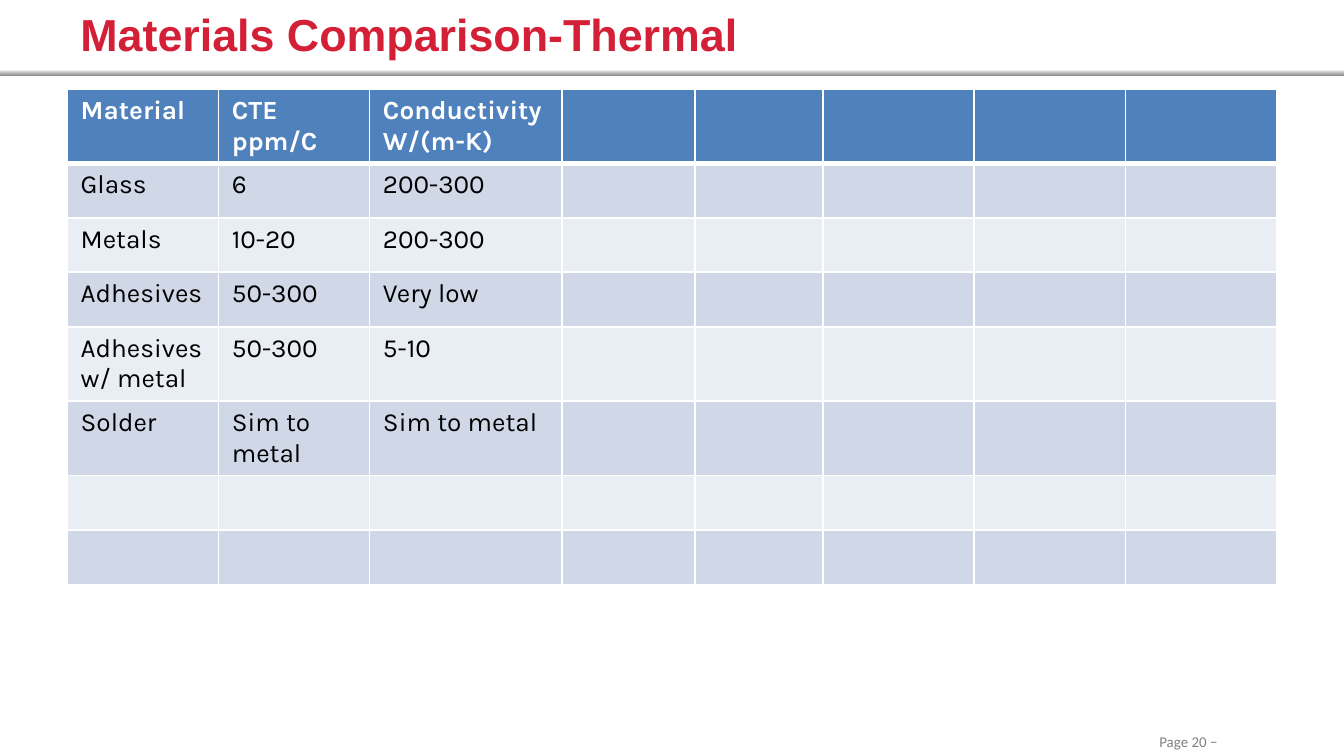
from dataclasses import dataclass

from lxml.etree import SubElement
from pptx import Presentation
from pptx.dml.color import RGBColor
from pptx.enum.shapes import MSO_SHAPE
from pptx.enum.text import MSO_ANCHOR, PP_ALIGN
from pptx.oxml.ns import qn
from pptx.slide import Slide
from pptx.table import _Cell
from pptx.util import Pt

RED = RGBColor(0xD4, 0x20, 0x37)
BLACK = RGBColor(0x00, 0x00, 0x00)
WHITE = RGBColor(0xFF, 0xFF, 0xFF)
GRAY = RGBColor(0x80, 0x80, 0x80)
MID_GRAY = RGBColor(0xA6, 0xA6, 0xA6)
LIGHT_GRAY = RGBColor(0xEE, 0xEE, 0xEE)
HEADER_BLUE = RGBColor(0x4F, 0x81, 0xBD)
BAND_COLORS = (RGBColor(0xE9, 0xED, 0xF4), RGBColor(0xD0, 0xD8, 0xE8))

COLUMN_WIDTHS = (81, 81, 103, 71.5, 68.5, 81, 81, 81)
ROW_HEIGHT = 29.2
ROW_COUNT = 8
CELL_FONT_SIZE = 14


@dataclass(frozen=True)
class Label:
    text: str
    left: float
    top: float
    width: float
    height: float
    font_name: str
    size: float
    color: RGBColor
    bold: bool = False
    alignment: PP_ALIGN = PP_ALIGN.LEFT


@dataclass(frozen=True)
class Material:
    name: str
    expansion: str
    conductivity: str


LABELS = (
    Label("Page 20 −", 571.7, 388.8, 87.8, 17.3, "Calibri", 8, GRAY,
          alignment=PP_ALIGN.RIGHT),
    Label("Materials Comparison-Thermal", 36, 0, 648, 36, "Arial", 24, RED,
          bold=True),
)

# A vertical tab is a line break within the paragraph
MATERIALS = (
    Material("Material", "CTE\vppm/C", "Conductivity W/(m-K)"),
    Material("Glass", "6", "200-300"),
    Material("Metals", "10-20", "200-300"),
    Material("Adhesives", "50-300", "Very low"),
    Material("Adhesives w/ metal", "50-300", "5-10"),
    Material("Solder", "Sim to metal", "Sim to metal"),
)


def add_label(slide: Slide, label: Label) -> None:
    shape = slide.shapes.add_textbox(Pt(label.left), Pt(label.top),
                                     Pt(label.width), Pt(label.height))
    text_frame = shape.text_frame
    text_frame.word_wrap = True
    text_frame.vertical_anchor = MSO_ANCHOR.MIDDLE
    text_frame.text = label.text
    paragraph = text_frame.paragraphs[0]
    paragraph.alignment = label.alignment
    font = paragraph.runs[0].font
    font.name = label.font_name
    font.size = Pt(label.size)
    font.bold = label.bold
    font.color.rgb = label.color


def add_divider(slide: Slide) -> None:
    shape = slide.shapes.add_shape(MSO_SHAPE.RECTANGLE, Pt(0), Pt(37.5),
                                   Pt(720), Pt(3.5))
    shape.shadow.inherit = False
    shape.line.fill.background()
    shape.fill.gradient()
    shape.fill.gradient_angle = 90
    stop_list = shape.fill._fill._gradFill.find(qn("a:gsLst"))
    for stop in list(stop_list):
        stop_list.remove(stop)
    for position, color in ((0, GRAY), (35, MID_GRAY), (100, LIGHT_GRAY)):
        stop = SubElement(stop_list, qn("a:gs"), pos=str(position * 1000))
        SubElement(stop, qn("a:srgbClr"), val=str(color))


def set_borders(cell: _Cell, top: float, bottom: float) -> None:
    properties = cell._tc.get_or_add_tcPr()
    for side, width in (("L", 1), ("R", 1), ("T", top), ("B", bottom)):
        line = SubElement(properties, qn(f"a:ln{side}"), w=str(Pt(width)))
        fill = SubElement(line, qn("a:solidFill"))
        SubElement(fill, qn("a:srgbClr"), val=str(WHITE))


def fill_cell(cell: _Cell, text: str, row_index: int) -> None:
    is_header = row_index == 0
    set_borders(cell, top=3 if row_index == 1 else 1,
                bottom=3 if is_header else 1)
    cell.fill.solid()
    cell.fill.fore_color.rgb = (HEADER_BLUE if is_header
                                else BAND_COLORS[row_index % 2])
    paragraph = cell.text_frame.paragraphs[0]
    if not text:
        # Keep empty cells from growing their row
        SubElement(paragraph._p, qn("a:endParaRPr"),
                   sz=str(CELL_FONT_SIZE * 100))
        return
    paragraph.text = text
    for run in paragraph.runs:
        run.font.name = "Karla"
        run.font.size = Pt(CELL_FONT_SIZE)
        run.font.bold = is_header
        run.font.color.rgb = WHITE if is_header else BLACK


def add_material_table(slide: Slide) -> None:
    table = slide.shapes.add_table(
        ROW_COUNT, len(COLUMN_WIDTHS), Pt(36), Pt(47.6),
        Pt(sum(COLUMN_WIDTHS)), Pt(ROW_HEIGHT * ROW_COUNT)).table
    for column, width in zip(table.columns, COLUMN_WIDTHS):
        column.width = Pt(width)
    for row_index, row in enumerate(table.rows):
        row.height = Pt(ROW_HEIGHT)
        texts: tuple[str, ...] = ()
        if row_index < len(MATERIALS):
            material = MATERIALS[row_index]
            texts = (material.name, material.expansion, material.conductivity)
        for column_index, cell in enumerate(row.cells):
            text = texts[column_index] if column_index < len(texts) else ""
            fill_cell(cell, text, row_index)


def main() -> None:
    presentation = Presentation()
    presentation.slide_width = Pt(720)
    presentation.slide_height = Pt(405)
    slide = presentation.slides.add_slide(presentation.slide_layouts[6])

    # Divider under the title
    add_divider(slide)
    # Comparison table
    add_material_table(slide)
    # Page number and title
    for label in LABELS:
        add_label(slide, label)

    presentation.save("out.pptx")


if __name__ == "__main__":
    main()
